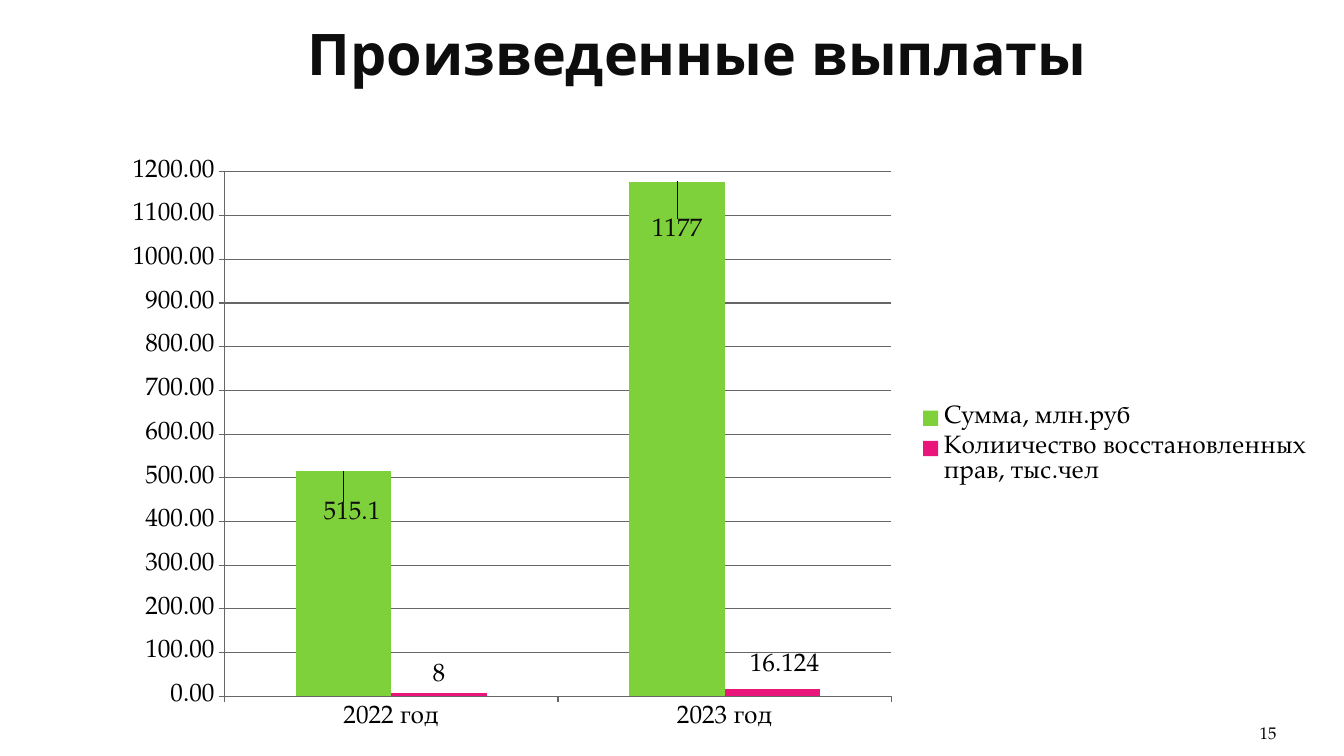
from lxml.etree import SubElement
from pptx import Presentation
from pptx.chart.data import CategoryChartData
from pptx.dml.color import RGBColor
from pptx.enum.chart import XL_CHART_TYPE, XL_LABEL_POSITION, XL_LEGEND_POSITION, XL_TICK_MARK
from pptx.enum.text import MSO_ANCHOR, PP_ALIGN
from pptx.oxml.ns import qn
from pptx.util import Inches, Pt

HUES = {"title": "0D0D0D", "text": "000000", "sum": "7FD13B", "count": "EA157A", "line": "666666"}
SERIF = "TeX Gyre Pagella"
YEARS = ["2022 год", "2023 год"]
ROWS = [
    ("Сумма, млн.руб", [515.1, 1177], "sum", "title", [(0.007, 0.1), (0, 0.11)]),
    ("Колиичество восстановленных прав, тыс.чел", [8, 16.124], "count", "text", [(0, 0), (0.01, -0.01)]),
]


def color(name):
    """Return the named colour."""
    return RGBColor.from_string(HUES[name])


def style(font, size=18, hue="text", face=SERIF, bold=False):
    """Set the format of a font."""
    font.size, font.name, font.bold = Pt(size), face, bold
    font.color.rgb = color(hue)


def write(slide, box, text, align=PP_ALIGN.CENTER, anchor=MSO_ANCHOR.MIDDLE, inset=0.1, **form):
    """Put formatted text in a box."""
    frame = slide.shapes.add_textbox(*map(Inches, box)).text_frame
    frame.word_wrap = True
    frame.vertical_anchor = anchor
    frame.margin_left = frame.margin_right = Inches(inset)
    para = frame.paragraphs[0]
    para.alignment = align
    run = para.add_run()
    run.text = text
    style(run.font, **form)


def place(layout, edge=False, **parts):
    """Fill a chart layout with fractions of the chart box."""
    for old in list(layout):
        layout.remove(old)
    manual = SubElement(layout, qn("c:manualLayout"))
    modes = {"layoutTarget": "inner", "xMode": "edge", "yMode": "edge"} if edge else {}
    for tag, value in {**modes, **parts}.items():
        SubElement(manual, qn("c:" + tag)).set("val", str(value))


def label(series, hue, shifts):
    """Show each value, moved from the top of its bar."""
    for i, (dx, dy) in enumerate(shifts):
        mark = series.points[i].data_label
        style(mark.font, hue=hue)
        mark.position = XL_LABEL_POSITION.OUTSIDE_END
        node = series.data_labels._element.findall(qn("c:dLbl"))[i]
        layout = SubElement(node, qn("c:layout"))
        node.insert(1, layout)
        place(layout, x=dx, y=dy)


def axes(chart):
    """Format both axes and the gridlines."""
    scale = chart.value_axis
    scale.minimum_scale, scale.maximum_scale, scale.major_unit = 0, 1200, 100
    scale.tick_labels.number_format = "0.00"
    scale.tick_labels.number_format_is_linked = False
    scale.has_major_gridlines = True
    for axis in (scale, chart.category_axis):
        axis.major_tick_mark = XL_TICK_MARK.OUTSIDE
        style(axis.tick_labels.font)
    for line in (scale.format.line, chart.category_axis.format.line, scale.major_gridlines.format.line):
        line.color.rgb = color("line")
        line.width = Pt(0.75)


def graph(slide, box):
    """Draw the column chart with its legend."""
    data = CategoryChartData(number_format="General")
    data.categories = YEARS
    for name, values, *_ in ROWS:
        data.add_series(name, values)
    chart = slide.shapes.add_chart(XL_CHART_TYPE.COLUMN_CLUSTERED, *map(Inches, box), data).chart
    style(chart.font)
    chart.has_title = False
    axes(chart)
    plot = chart.plots[0]
    plot.gap_width, plot.overlap, plot.vary_by_categories = 150, 0, False
    for series, (_, _, fill, hue, shifts) in zip(plot.series, ROWS):
        series.format.fill.solid()
        series.format.fill.fore_color.rgb = color(fill)
        label(series, hue, shifts)
    area = chart._chartSpace.chart.plotArea
    layout = area.find(qn("c:layout"))
    if layout is None:
        layout = SubElement(area, qn("c:layout"))
        area.insert(0, layout)
    place(layout, edge=True, x=0.096, y=0.04, w=0.549, h=0.88)
    chart.has_legend = True
    chart.legend.position = XL_LEGEND_POSITION.RIGHT
    chart.legend.include_in_layout = False
    style(chart.legend.font)


def payments(deck):
    """Build the slide of payments made."""
    slide = deck.slides.add_slide(deck.slide_layouts[6])
    write(slide, (1.33, 0.13, 11.33, 0.79), "Произведенные выплаты ",
          size=41, hue="title", face="Open Sans", bold=True)
    graph(slide, (1.07, 1.47, 12.05, 5.91))
    write(slide, (11.55, 7.02, 1.11, 0.4), "15", align=PP_ALIGN.RIGHT,
          anchor=MSO_ANCHOR.BOTTOM, inset=0, size=12)


def main():
    """Create and save the deck."""
    deck = Presentation()
    deck.slide_width, deck.slide_height = Inches(13.33), Inches(7.5)
    payments(deck)
    deck.save("out.pptx")


if __name__ == "__main__":
    main()
